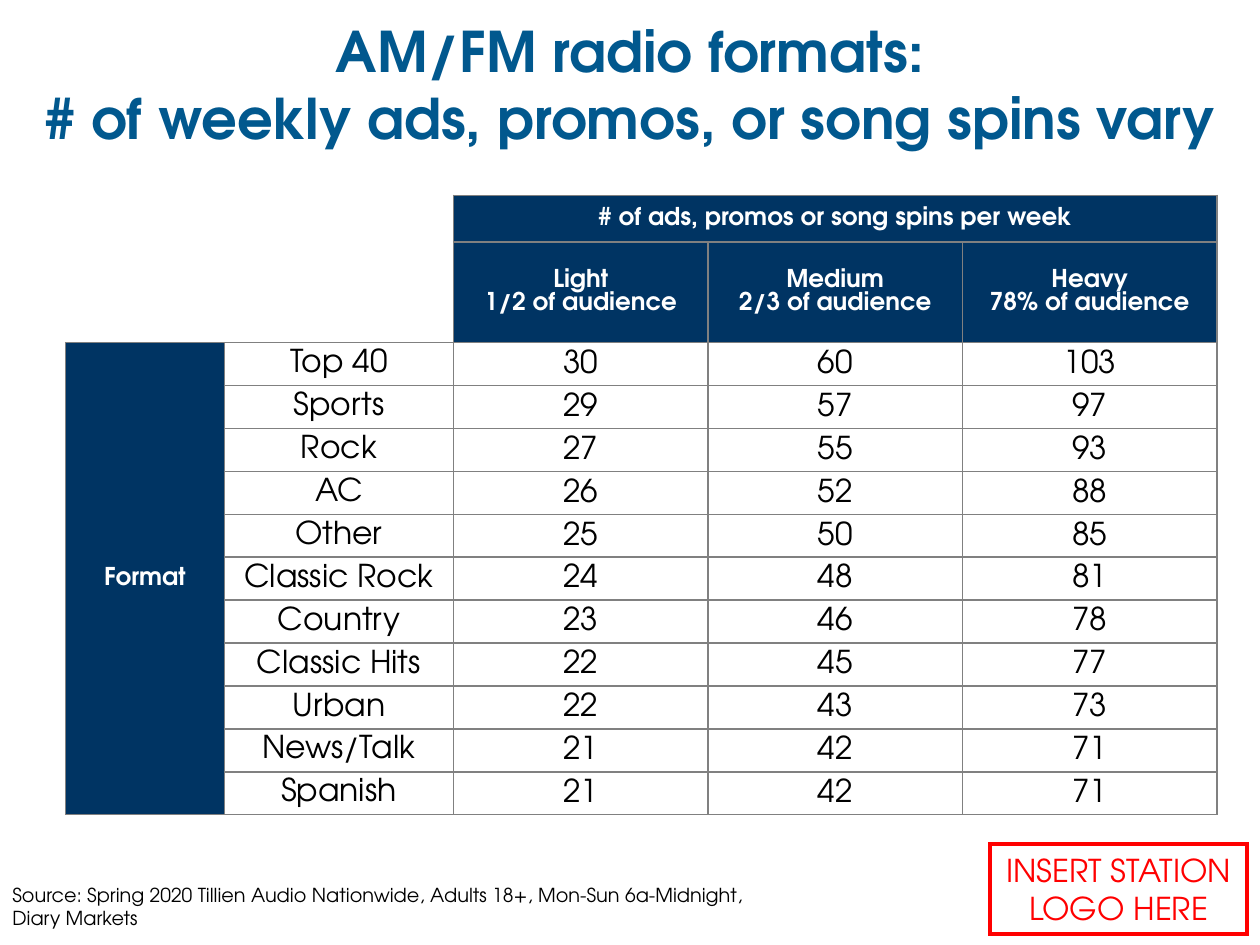
from pptx import Presentation
from pptx.dml.color import RGBColor
from pptx.enum.shapes import MSO_SHAPE
from pptx.enum.text import MSO_ANCHOR, PP_ALIGN
from pptx.oxml.ns import qn
from pptx.util import Inches, Pt
from lxml import etree

CENTER, LEFT = PP_ALIGN.CENTER, PP_ALIGN.LEFT
MIDDLE = MSO_ANCHOR.MIDDLE
RECT = MSO_SHAPE.RECTANGLE
FONT = "TeX Gyre Adventor"
NAVY, BLUE, GRAY = "003463", "01588E", "808080"
WHITE, BLACK, RED = "FFFFFF", "000000", "FF0000"

COL_WIDTHS = [1.26, 1.82, 2.02, 2.02, 2.02]
HEADER_HEIGHTS = [0.37, 0.8]
LEVELS = ["Light\n1/2 of audience", "Medium\n2/3 of audience", "Heavy\n78% of audience"]
FORMATS = [
    ("Top 40", 30, 60, 103),
    ("Sports", 29, 57, 97),
    ("Rock", 27, 55, 93),
    ("AC", 26, 52, 88),
    ("Other", 25, 50, 85),
    ("Classic Rock", 24, 48, 81),
    ("Country", 23, 46, 78),
    ("Classic Hits", 22, 45, 77),
    ("Urban", 22, 43, 73),
    ("News/Talk", 21, 42, 71),
    ("Spanish", 21, 42, 71),
]


def rgb(color):
    return RGBColor.from_string(color)


def set_text(tf, text, size, color, bold=False, align=CENTER):
    tf.text = text
    tf.word_wrap = True
    for p in tf.paragraphs:
        p.alignment = align
        for r in p.runs:
            r.font.name, r.font.size, r.font.bold = FONT, Pt(size), bold
            r.font.color.rgb = rgb(color)


def set_margins(target, left, top, right, bottom):
    target.margin_left, target.margin_top = Inches(left), Inches(top)
    target.margin_right, target.margin_bottom = Inches(right), Inches(bottom)


def set_borders(cell, sides):
    """Draw gray lines on the named sides (L, R, T, B) and none on the others."""
    tc_pr = cell._tc.get_or_add_tcPr()
    for side in "LRTB":
        ln = etree.SubElement(tc_pr, qn(f"a:ln{side}"), w=str(Pt(1)))
        if side in sides:
            fill = etree.SubElement(ln, qn("a:solidFill"))
            etree.SubElement(fill, qn("a:srgbClr"), val=GRAY)
        else:
            etree.SubElement(ln, qn("a:noFill"))


def add_text(s, box, text, size, color, bold=False, align=CENTER):
    tf = s.shapes.add_textbox(*map(Inches, box)).text_frame
    set_text(tf, text, size, color, bold, align)


def add_header(cell, text):
    cell.fill.solid()
    cell.fill.fore_color.rgb = rgb(NAVY)
    set_text(cell.text_frame, text, 14, WHITE, bold=True)


def add_spins_table(s, box):
    body_height = (box[3] - sum(HEADER_HEIGHTS)) / len(FORMATS)
    row_heights = HEADER_HEIGHTS + [body_height] * len(FORMATS)
    table = s.shapes.add_table(len(row_heights), len(COL_WIDTHS), *map(Inches, box)).table
    table.first_row = table.horz_banding = False
    for col, width in zip(table.columns, COL_WIDTHS):
        col.width = Inches(width)
    for row, height in zip(table.rows, row_heights):
        row.height = Inches(height)

    # Borders everywhere except around the empty top-left corner
    for i in range(len(row_heights)):
        for j in range(len(COL_WIDTHS)):
            cell = table.cell(i, j)
            corner = i < 2 and j < 2
            sides = ("R" if j == 1 else "") + ("B" if i == 1 else "") if corner else "LRTB"
            set_borders(cell, sides)
            cell.fill.background()
            cell.vertical_anchor = MIDDLE
            if corner:
                set_margins(cell, 0, 0, 0, 0)

    # Headers
    table.cell(0, 2).merge(table.cell(0, 4))
    table.cell(2, 0).merge(table.cell(len(row_heights) - 1, 0))
    add_header(table.cell(0, 2), "# of ads, promos or song spins per week")
    add_header(table.cell(2, 0), "Format")
    for j, level in enumerate(LEVELS, 2):
        add_header(table.cell(1, j), level)

    # Formats and their weekly counts
    for i, values in enumerate(FORMATS, 2):
        for j, value in enumerate(values, 1):
            cell = table.cell(i, j)
            margins = (0.07, 0, 0.07, 0) if j == 1 else (0.01, 0.01, 0.01, 0)
            set_margins(cell, *margins)
            set_text(cell.text_frame, str(value), 18, BLACK)


def add_logo_box(s, box):
    sp = s.shapes.add_shape(RECT, *map(Inches, box))
    sp.shadow.inherit = False
    sp.fill.background()
    sp.line.color.rgb = rgb(RED)
    sp.line.width = Pt(2.25)
    # Sharp corners
    ln = sp.line._get_or_add_ln()
    etree.SubElement(ln, qn("a:miter"), lim="800000")
    set_margins(sp.text_frame, 0.05, 0.05, 0.05, 0.05)
    set_text(sp.text_frame, "INSERT STATION LOGO HERE", 18, RED)


def main():
    prs = Presentation()
    prs.slide_width, prs.slide_height = Inches(10), Inches(7.5)
    s = prs.slides.add_slide(prs.slide_layouts[6])
    add_spins_table(s, (0.52, 1.55, 9.14, 4.92))
    # Title, source note and logo placeholder
    add_text(s, (0, 0.08, 10, 1.18),
             "AM/FM radio formats:\v# of weekly ads, promos, or song spins vary",
             32, BLUE, bold=True)
    add_text(s, (0, 6.96, 6.17, 0.48),
             "Source: Spring 2020 Tillien Audio Nationwide, Adults 18+, "
             "Mon-Sun 6a-Midnight, Diary Markets", 11, BLACK, align=LEFT)
    add_logo_box(s, (7.86, 6.7, 2.04, 0.71))
    prs.save("out.pptx")


if __name__ == "__main__":
    main()
